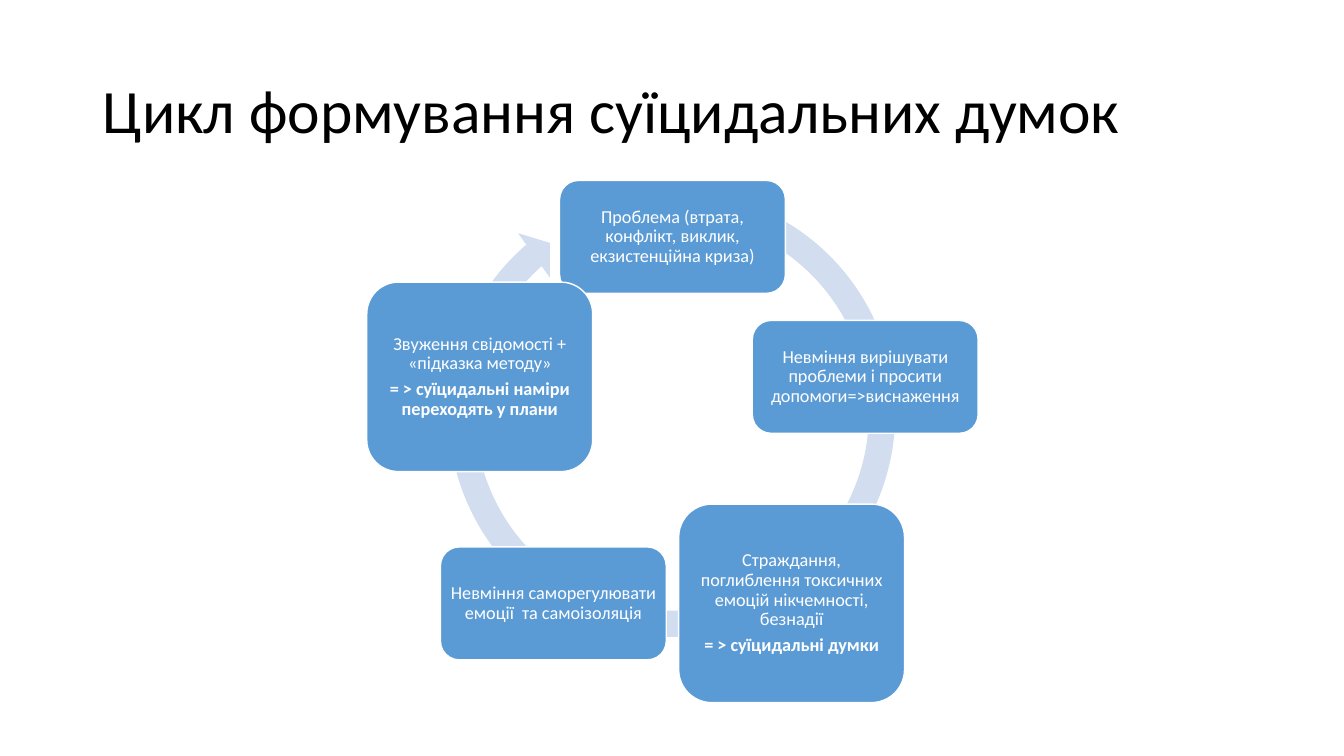
from math import cos, radians, sin

from pptx import Presentation
from pptx.dml.color import RGBColor
from pptx.enum import shapes, text
from pptx.util import Inches, Pt

BLACK = RGBColor(0x00, 0x00, 0x00)
WHITE = RGBColor(0xFF, 0xFF, 0xFF)
STAGE_BLUE = RGBColor(0x5B, 0x9B, 0xD5)
RING_BLUE = RGBColor(0xD2, 0xDE, 0xEF)

HEADING = "Цикл формування суїцидальних думок"
STAGES = [
    (1.12, "Проблема (втрата, конфлікт, виклик, екзистенційна криза)", None),
    (1.12, "Невміння вирішувати проблеми і просити допомоги=>виснаження", None),
    (1.97, "Страждання, поглиблення токсичних емоцій нікчемності, безнадії",
     "= > суїцидальні думки"),
    (1.12, "Невміння саморегулювати емоції  та самоізоляція", None),
    (1.88, "Звуження свідомості + «підказка методу»",
     "= > суїцидальні наміри переходять у плани"),
]

CENTER_X, CENTER_Y = 6.67, 4.36
ORBIT = 2.01
STAGE_WIDTH = 2.24
STAGE_INSET = 0.05
RING_LEFT, RING_TOP, RING_SIZE = 4.31, 1.75, 4.71
RING_THICKNESS, RING_HEAD = 5.54, 5.76
RING_ANGLES = (5.51, 228.94, 290.17)
ANGLE_UNIT = 0.6


def write_text(frame, lines, size, color, align, after=0, inset=None):
    frame.word_wrap = True
    frame.auto_size = text.MSO_AUTO_SIZE.NONE
    frame.vertical_anchor = text.MSO_ANCHOR.MIDDLE
    if inset is not None:
        frame.margin_left = frame.margin_right = Inches(inset)
        frame.margin_top = frame.margin_bottom = Inches(inset)
    for index, (wording, bold) in enumerate(lines):
        paragraph = frame.add_paragraph() if index else frame.paragraphs[0]
        paragraph.alignment = align
        paragraph.line_spacing = 0.9
        paragraph.space_before = Pt(0)
        paragraph.space_after = Pt(after)
        run = paragraph.add_run()
        run.text = wording
        run.font.name = "Calibri"
        run.font.size = Pt(size)
        run.font.bold = bold
        run.font.color.rgb = color


def add_ring(cycle):
    ring = cycle.shapes.add_shape(
        shapes.MSO_SHAPE.CIRCULAR_ARROW,
        Inches(RING_LEFT), Inches(RING_TOP), Inches(RING_SIZE), Inches(RING_SIZE))
    ring.shadow.inherit = False
    ring.fill.solid()
    ring.fill.fore_color.rgb = RING_BLUE
    ring.line.fill.background()
    settings = [RING_THICKNESS / 100, *(a * ANGLE_UNIT for a in RING_ANGLES), RING_HEAD / 100]
    for index, setting in enumerate(settings):
        ring.adjustments[index] = setting


def add_stage(cycle, index, height, cause, outcome):
    angle = radians(360 / len(STAGES) * index)
    left = CENTER_X + ORBIT * sin(angle) - STAGE_WIDTH / 2
    top = CENTER_Y - ORBIT * cos(angle) - height / 2
    stage = cycle.shapes.add_shape(
        shapes.MSO_SHAPE.ROUNDED_RECTANGLE,
        Inches(left), Inches(top), Inches(STAGE_WIDTH), Inches(height))
    stage.shadow.inherit = False
    stage.fill.solid()
    stage.fill.fore_color.rgb = STAGE_BLUE
    stage.line.color.rgb = WHITE
    stage.line.width = Pt(1)
    lines = [(cause, False)] + ([(outcome, True)] if outcome else [])
    write_text(stage.text_frame, lines, size=13, color=WHITE,
               align=text.PP_ALIGN.CENTER, after=4.55, inset=STAGE_INSET)


def main():
    deck = Presentation()
    deck.slide_width, deck.slide_height = Inches(13.33), Inches(7.5)
    slide = deck.slides.add_slide(deck.slide_layouts[5])

    heading = slide.shapes.title
    heading.left, heading.top = Inches(0.92), Inches(0.4)
    heading.width, heading.height = Inches(11.5), Inches(1.45)
    write_text(heading.text_frame, [(HEADING, False)], size=44, color=BLACK,
               align=text.PP_ALIGN.LEFT)

    cycle = slide.shapes.add_group_shape()
    add_ring(cycle)
    for index, stage in enumerate(STAGES):
        add_stage(cycle, index, *stage)

    deck.save("out.pptx")


if __name__ == "__main__":
    main()
